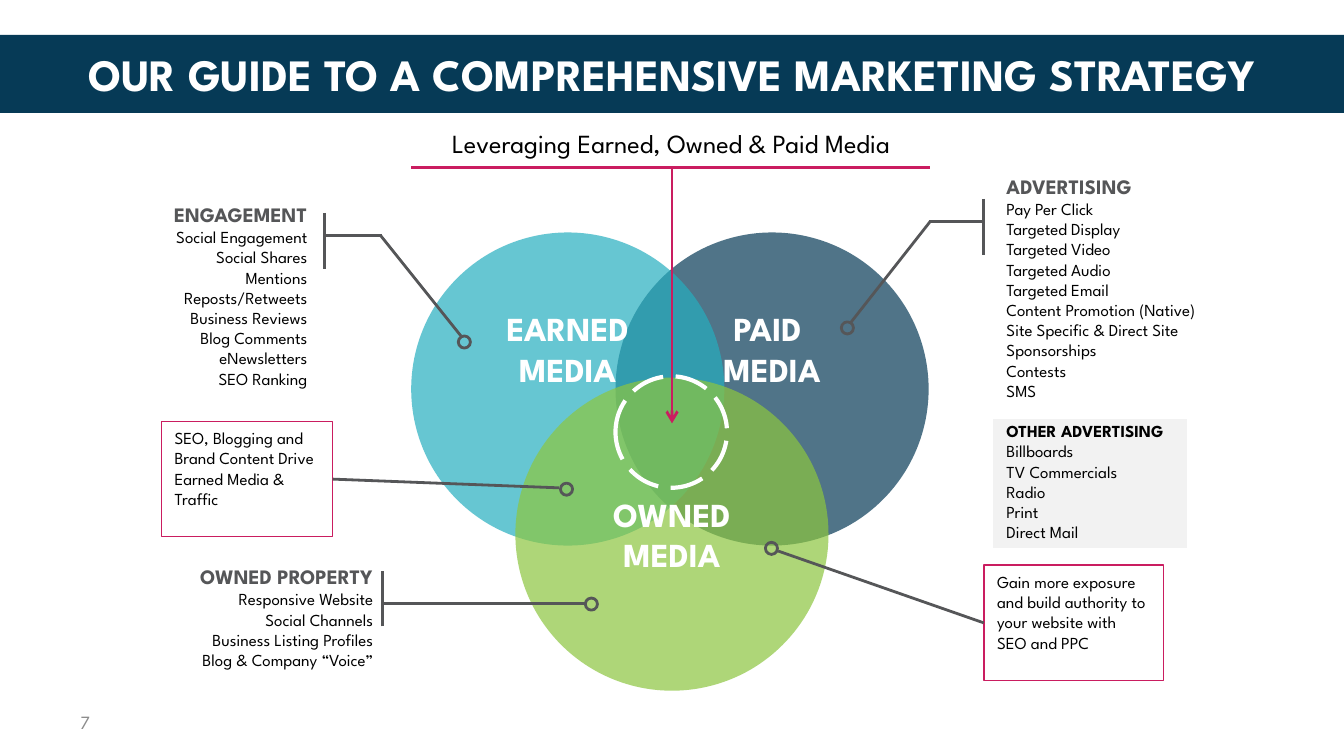
from lxml import etree
from pptx import Presentation
from pptx.dml.color import RGBColor
from pptx.enum.dml import MSO_LINE
from pptx.enum.shapes import MSO_CONNECTOR, MSO_SHAPE
from pptx.enum.text import MSO_ANCHOR, MSO_AUTO_SIZE, PP_ALIGN
from pptx.oxml.ns import qn
from pptx.util import Inches, Pt

NAVY = RGBColor(0x06, 0x3A, 0x56)
TEAL = RGBColor(0x26, 0xAE, 0xBF)
GREEN = RGBColor(0x8D, 0xC6, 0x3F)
PINK = RGBColor(0xCA, 0x1D, 0x60)
SLATE = RGBColor(0x55, 0x56, 0x58)
GREY = RGBColor(0x8C, 0x8C, 0x8C)
PALE = RGBColor(0xF2, 0xF2, 0xF2)
WHITE = RGBColor(0xFF, 0xFF, 0xFF)
BLACK = RGBColor(0, 0, 0)
FONT = "League Spartan"
LEFT, CENTER, RIGHT = PP_ALIGN.LEFT, PP_ALIGN.CENTER, PP_ALIGN.RIGHT
TOP, MIDDLE = MSO_ANCHOR.TOP, MSO_ANCHOR.MIDDLE
OVAL, RECT, PROCESS = MSO_SHAPE.OVAL, MSO_SHAPE.RECTANGLE, MSO_SHAPE.FLOWCHART_PROCESS
STRAIGHT = MSO_CONNECTOR.STRAIGHT
LEFT_SIDE, RIGHT_SIDE = 1, 3

prs = Presentation()
prs.slide_width = Inches(10)
prs.slide_height = prs.slide_width * 9 // 16
UNIT = prs.slide_width / 100  # square grid, 100 columns across the slide
slide = prs.slides.add_slide(prs.slide_layouts[5])
shapes = slide.shapes


def draw(kind, box, fill=None, line=None, width=1.5):
    """Add a flat shape; box is left, top, width, height in grid units."""
    shape = shapes.add_shape(kind, *(round(v * UNIT) for v in box))
    shape.shadow.inherit = False
    if fill is None:
        shape.fill.background()
    else:
        shape.fill.solid()
        shape.fill.fore_color.rgb = fill
    if line is None:
        shape.line.fill.background()
    else:
        shape.line.color.rgb = line
        shape.line.width = Pt(width)
    return shape


def write(shape, text, size, color=BLACK, bold=False, align=LEFT, anchor=TOP):
    frame = shape.text_frame
    frame.text = text
    frame.word_wrap = True
    frame.auto_size = MSO_AUTO_SIZE.NONE
    frame.vertical_anchor = anchor
    for paragraph in frame.paragraphs:
        paragraph.alignment = align
        for run in paragraph.runs:
            run.font.name, run.font.size, run.font.bold = FONT, Pt(size), bold
            run.font.color.rgb = color


# Banner and plain text
banner = shapes.title
banner.left, banner.top = 0, round(2.6 * UNIT)
banner.width, banner.height = prs.slide_width, round(5.8 * UNIT)
banner.fill.solid()
banner.fill.fore_color.rgb = NAVY
write(banner, "OUR GUIDE TO A COMPREHENSIVE MARKETING STRATEGY", 24, WHITE, True, CENTER, MIDDLE)

for box, text, size, color, align, anchor in (
    ((13.3, 9, 73.3, 3.3), "Leveraging Earned, Owned & Paid Media", 14, BLACK, CENTER, TOP),
    ((5, 52.2, 23.3, 3), "7", 10, GREY, LEFT, MIDDLE),
):
    label = shapes.add_textbox(*(round(v * UNIT) for v in box))
    write(label, text, size, color, False, align, anchor)

# Overlapping media circles
DIAMETER = 23.3
for left, top, color, text, lift in (
    (45.8, 17.3, NAVY, "PAID \nMEDIA", 6),
    (30.6, 17.3, TEAL, "EARNED MEDIA", 6),
    (38.35, 28.1, GREEN, "OWNED\vMEDIA", 0),
):
    circle = draw(OVAL, (left, top, DIAMETER, DIAMETER), color)
    solid = circle.fill.fore_color._xFill
    etree.SubElement(solid[0], qn("a:alpha"), val="70000")
    write(circle, text, 18, WHITE, True, CENTER, MIDDLE)
    circle.text_frame.margin_bottom = round((0.5 + lift) * UNIT)

overlap = draw(OVAL, (45.8, 28, 8.3, 8.3), line=WHITE, width=2.25)
overlap.line.dash_style = MSO_LINE.LONG_DASH

# Channel lists
draw(PROCESS, (73.9, 31.15, 14.4, 9.6), PALE)
for box, align, items in (
    ((73.9, 12.45, 21.1, 30.1), LEFT, (
        "ADVERTISING", "Pay Per Click", "Targeted Display", "Targeted Video",
        "Targeted Audio", "Targeted Email", "Content Promotion (Native)",
        "Site Specific & Direct Site", "Sponsorships", "Contests", "SMS",
        "OTHER ADVERTISING", "Billboards", "TV Commercials", "Radio", "Print", "Direct Mail")),
    ((8, 14.55, 15.85, 15), RIGHT, (
        "ENGAGEMENT", "Social Engagement", "Social Shares", "Mentions",
        "Reposts/Retweets", "Business Reviews", "Blog Comments", "eNewsletters", "SEO Ranking")),
    ((10.6, 41.5, 18.15, 8.9), RIGHT, (
        "OWNED PROPERTY", "Responsive Website", "Social Channels",
        "Business Listing Profiles", "Blog & Company “Voice”")),
):
    channels = shapes.add_textbox(*(round(v * UNIT) for v in box))
    write(channels, "\n".join(items), 9, align=align)
    heading = channels.text_frame.paragraphs[0].runs[0].font
    heading.size, heading.bold = Pt(11), True
    heading.color.rgb = SLATE
    for paragraph in channels.text_frame.paragraphs:
        if paragraph.text == "OTHER ADVERTISING":
            paragraph.space_before = Pt(10.8)
            paragraph.runs[0].font.bold = True

# Callouts
exposure = draw(RECT, (73.2, 42.05, 13.35, 8.6), WHITE, PINK, 0.75)
write(exposure, "Gain more exposure and build authority to your website with SEO and PPC", 9)
traffic = draw(RECT, (12, 31.35, 12.75, 8.6), WHITE, PINK, 0.75)
write(traffic, "SEO, Blogging and Brand Content Drive Earned Media & Traffic", 9)

# Leader lines: start, end, colour, callout joined at the end, its side
for start, end, color, callout, side in (
    ((63.3, 24), (69.2, 16.5), SLATE, None, None),
    ((69.1, 16.5), (73.2, 16.5), SLATE, None, None),
    ((73.2, 14.8), (73.2, 19), SLATE, None, None),
    ((34.3, 25), (28.3, 17.5), SLATE, None, None),
    ((28.4, 17.5), (24.15, 17.5), SLATE, None, None),
    ((24.15, 15.85), (24.15, 20), SLATE, None, None),
    ((43.6, 44.9), (28.45, 44.9), SLATE, None, None),
    ((28.45, 46.6), (28.45, 42.5), SLATE, None, None),
    ((41.6, 36.3), (24.75, 35.65), SLATE, traffic, RIGHT_SIDE),
    ((57.9, 41), (73.2, 46.35), SLATE, exposure, LEFT_SIDE),
    ((30.6, 12.45), (69.2, 12.45), PINK, None, None),
    ((50, 12.45), (50, 31.5), PINK, None, None),
):
    leader = shapes.add_connector(STRAIGHT, *(round(v * UNIT) for v in start + end))
    leader.line.color.rgb = color
    leader.line.width = Pt(1.5)
    etree.SubElement(leader._element.spPr, qn("a:effectLst"))
    if callout is not None:
        leader.end_connect(callout, side)

# The last leader points into the overlap
etree.SubElement(leader.line._get_or_add_ln(), qn("a:tailEnd"), type="arrow")

for left, top in ((62.6, 23.95), (34.1, 25), (43.55, 44.5), (41.7, 35.95), (56.95, 40.35)):
    draw(OVAL, (left, top, 0.9, 0.9), line=SLATE)

prs.save("out.pptx")
